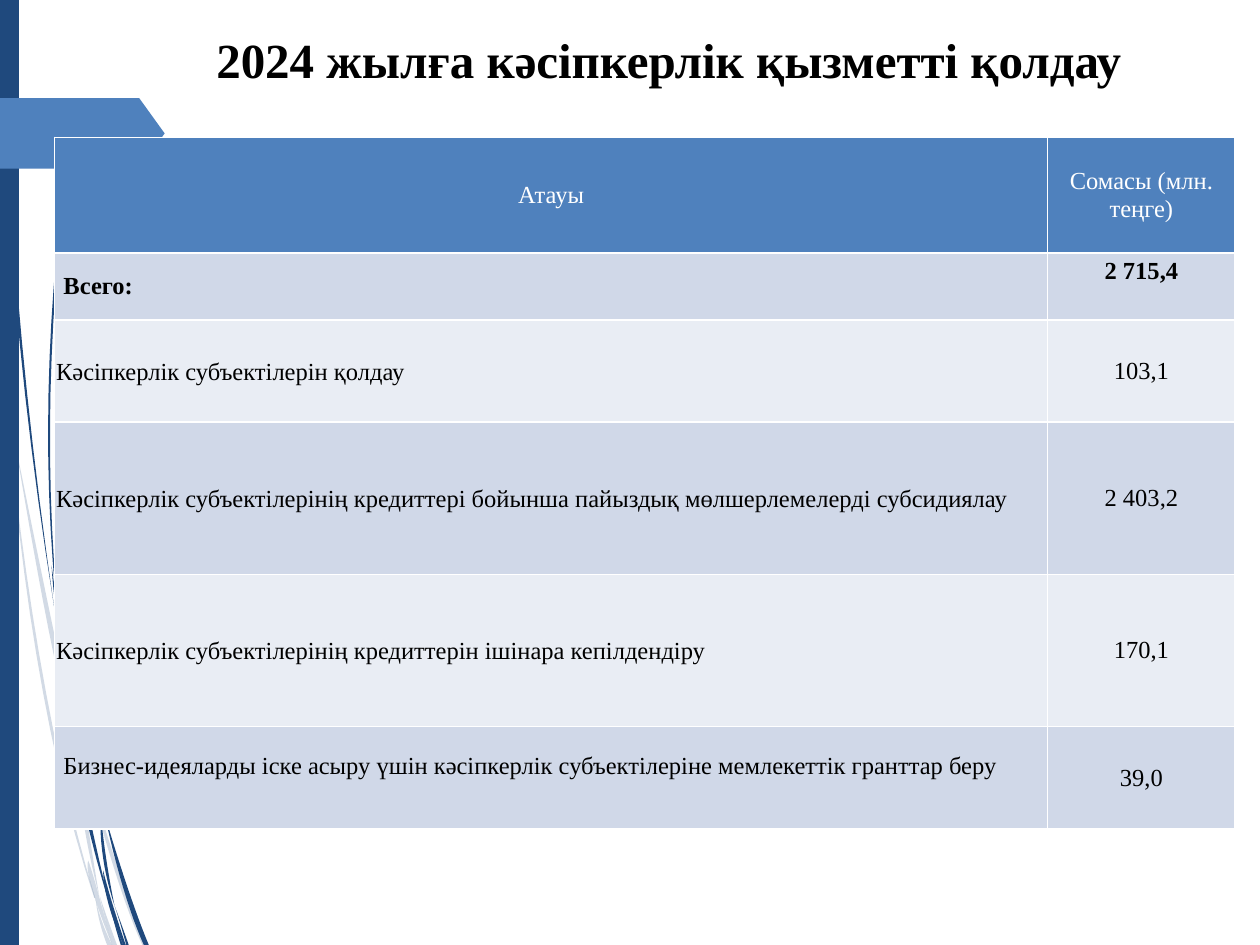
from lxml.etree import SubElement
from pptx import Presentation
from pptx.dml.color import RGBColor
from pptx.enum.shapes import MSO_SHAPE
from pptx.enum.text import MSO_ANCHOR, PP_ALIGN
from pptx.oxml import parse_xml
from pptx.oxml.ns import nsdecls, qn
from pptx.util import Cm, Pt

FONT = "Times New Roman"
NAVY, BLUE, WHITE, BLACK = "1F497D", "4F81BD", "FFFFFF", "000000"
BANDS = ["E9EDF4", "D0D8E8"]
LEFT, CENTER = PP_ALIGN.LEFT, PP_ALIGN.CENTER
TOP, MIDDLE = MSO_ANCHOR.TOP, MSO_ANCHOR.MIDDLE
WIDE, TIGHT, LOW = (0.18, 0.1, 0.18, 0.1), (0.03, 0.03, 0.03, 0), (0.18, 0.53, 0.18, 0)

TITLE = "2024 жылға кәсіпкерлік қызметті қолдау"
HEADS = ("Атауы", "Сомасы (млн. теңге)")
ITEMS = [
    ("Всего:", "2 715,4"),
    ("Кәсіпкерлік субъектілерін қолдау", "103,1"),
    ("Кәсіпкерлік субъектілерінің кредиттері бойынша пайыздық мөлшерлемелерді субсидиялау", "2 403,2"),
    ("Кәсіпкерлік субъектілерінің кредиттерін ішінара кепілдендіру", "170,1"),
    ("Бизнес-идеяларды іске асыру үшін кәсіпкерлік субъектілеріне мемлекеттік гранттар беру", "39,0"),
]
ROWS = [HEADS] + ITEMS
TOTAL, LAST = 1, len(ITEMS)
COLS = [20.02, 3.78]
TALL = [2.33, 1.35, 2.06, 3.07, 3.07, 2.06]
PADS = [WIDE, WIDE, TIGHT, TIGHT, TIGHT, LOW]

STEPS = 12
KNOTS = ("start", "middle", "end")
PALE = {
    "nib": [(0, 7.38, 0.05), (0.1, 8.13, 0.05), (0.2, 8.9, 0.05)],
    "stem": [(0.3, 8.9, 0), (1.14, 13.23, 0.1), (1.61, 15.1, 0.02)],
    "foot": [(1.68, 15.3, 0.02), (2.37, 17.6, 0.08), (2.91, 19.05, 0.08)],
    "root": [(2.01, 18.06, 0), (2.16, 18.57, 0.05), (2.31, 19.05, 0.1)],
    "bow": [(0.2, 8.89, 0), (0.9, 13.97, 0.06), (1.91, 18.1, 0.02)],
    "link": [(1.6, 15.21, 0), (1.7, 16.41, 0.08), (2, 18.06, 0)],
    "branch": [(5.94, 3.89, 0), (3.02, 8.86, 0.05), (1.65, 15.1, 0.05)],
    "tail": [(1.93, 18.14, 0), (2.04, 18.6, 0.05), (2.21, 19.05, 0.1)],
    "joint": [(1.63, 14.88, 0), (1.64, 15.2, 0.08), (1.68, 15.5, 0)],
    "base": [(1.78, 17.35, 0), (1.9, 17.9, 0.1), (2.26, 19.05, 0)],
}
DARK = {
    "nib": [(0.06, 0, 0.02), (0.33, 5.9, 0.05), (1.09, 12.22, 0)],
    "stem": [(1.14, 11.99, 0), (1.5, 13.97, 0.09), (2.03, 16.26, 0)],
    "foot": [(2.1, 16.38, 0), (2.53, 17.9, 0.09), (2.95, 19.05, 0.1)],
    "bow": [(1.09, 12.12, 0), (1.52, 15.24, 0.09), (2.24, 18.34, 0)],
    "crown": [(1.32, 3.58, 0.03), (1, 7.9, 0.04), (1.13, 11.99, 0.02)],
    "root": [(2.31, 18.26, 0), (2.44, 18.64, 0.02), (2.57, 19.05, 0.05)],
    "splice": [(1.04, 11.4, 0), (1.12, 12.1, 0.03), (1.22, 12.83, 0)],
    "branch": [(4.95, 8.74, 0), (3, 12.07, 0.05), (2.08, 16.2, 0.06)],
    "tail": [(2.24, 18.34, 0), (2.34, 18.7, 0.02), (2.46, 19.05, 0.05)],
    "link": [(2.03, 16.38, 0), (2.11, 17.3, 0.06), (2.31, 18.26, 0)],
    "joint": [(2.03, 16.03, 0), (2.07, 16.35, 0.05), (2.11, 16.66, 0)],
    "base": [(2.08, 17.55, 0), (2.22, 18.2, 0.08), (2.51, 19.05, 0.05)],
}


def tint(hex):
    return RGBColor.from_string(hex)


def paint(shape, hex, clear=None):
    shape.shadow.inherit = False
    shape.fill.solid()
    shape.fill.fore_color.rgb = tint(hex)
    shape.line.fill.background()
    if clear:
        tone = shape._element.spPr.find(qn("a:solidFill"))[0]
        SubElement(tone, qn("a:alpha")).set("val", str(clear * 1000))


def blend(start, middle, end, t):
    return start * (1 - t) * (1 - 2 * t) + middle * 4 * t * (1 - t) + end * t * (2 * t - 1)


def sweep(slide, knots, hex, clear=None):
    near, far = [], []
    for step in range(STEPS + 1):
        x, y, width = (blend(*axis, step / STEPS) for axis in zip(*knots))
        near.append((Cm(x - width / 2), Cm(y)))
        far.append((Cm(x + width / 2), Cm(y)))
    edge = near + far[::-1]
    build = slide.shapes.build_freeform(*edge[0])
    build.add_line_segments(edge[1:], close=True)
    paint(build.convert_to_shape(), hex, clear)


def block(slide, kind, top, width, height, hex):
    shape = slide.shapes.add_shape(kind, 0, Cm(top), Cm(width), Cm(height))
    paint(shape, hex)
    return shape


def adorn(slide):
    for group, clear in ((PALE, 20), (DARK, None)):
        for knots in group.values():
            sweep(slide, knots, NAVY, clear)
    block(slide, MSO_SHAPE.RECTANGLE, 0, 0.38, 19.05, NAVY)
    flag = block(slide, MSO_SHAPE.PENTAGON, 1.98, 3.32, 1.42, BLUE)
    flag.adjustments[0] = 0.36


def write(frame, text, size, hex, bold, align):
    frame.text = text
    para = frame.paragraphs[0]
    para.alignment = align
    font = para.font
    font.name, font.size, font.bold = FONT, Pt(size), bold
    font.color.rgb = tint(hex)
    return para


def head(slide):
    title = slide.shapes.title
    title.left, title.top, title.width, title.height = map(Cm, (1.68, 0.46, 22.66, 2.29))
    para = write(title.text_frame, TITLE, 28, BLACK, True, CENTER)
    title.text_frame.vertical_anchor = TOP
    para._p.get_or_add_pPr().set("indent", str(Cm(0.94)))


def rule(cell):
    props = cell._tc.get_or_add_tcPr()
    for spot, side in enumerate("LRTB"):
        props.insert(spot, parse_xml(
            f'<a:ln{side} {nsdecls("a")} w="{Pt(1)}"><a:solidFill>'
            f'<a:srgbClr val="{WHITE}"/></a:solidFill></a:ln{side}>'))


def fill(cell, text, r, c):
    header, amount = r == 0, c == 1
    write(cell.text_frame, text, 14, WHITE if header else BLACK, r == TOTAL,
          CENTER if header or amount else LEFT)
    cell.vertical_anchor = TOP if (r, c) in ((TOTAL, 1), (LAST, 0)) else MIDDLE
    pad = WIDE if amount else PADS[r]
    cell.margin_left, cell.margin_top, cell.margin_right, cell.margin_bottom = map(Cm, pad)
    cell.fill.solid()
    cell.fill.fore_color.rgb = tint(BLUE if header else BANDS[r % 2])
    rule(cell)


def grid(slide):
    table = slide.shapes.add_table(
        len(ROWS), len(COLS), Cm(1.1), Cm(2.77), Cm(sum(COLS)), Cm(sum(TALL))).table
    for col, width in zip(table.columns, COLS):
        col.width = Cm(width)
    for r, (row, tall) in enumerate(zip(ROWS, TALL)):
        table.rows[r].height = Cm(tall)
        for c, text in enumerate(row):
            fill(table.cell(r, c), text, r, c)


def main():
    deck = Presentation()
    deck.slide_width, deck.slide_height = Cm(25.4), Cm(19.05)
    slide = deck.slides.add_slide(deck.slide_layouts[5])
    adorn(slide)
    head(slide)
    grid(slide)
    deck.save("out.pptx")


if __name__ == "__main__":
    main()
